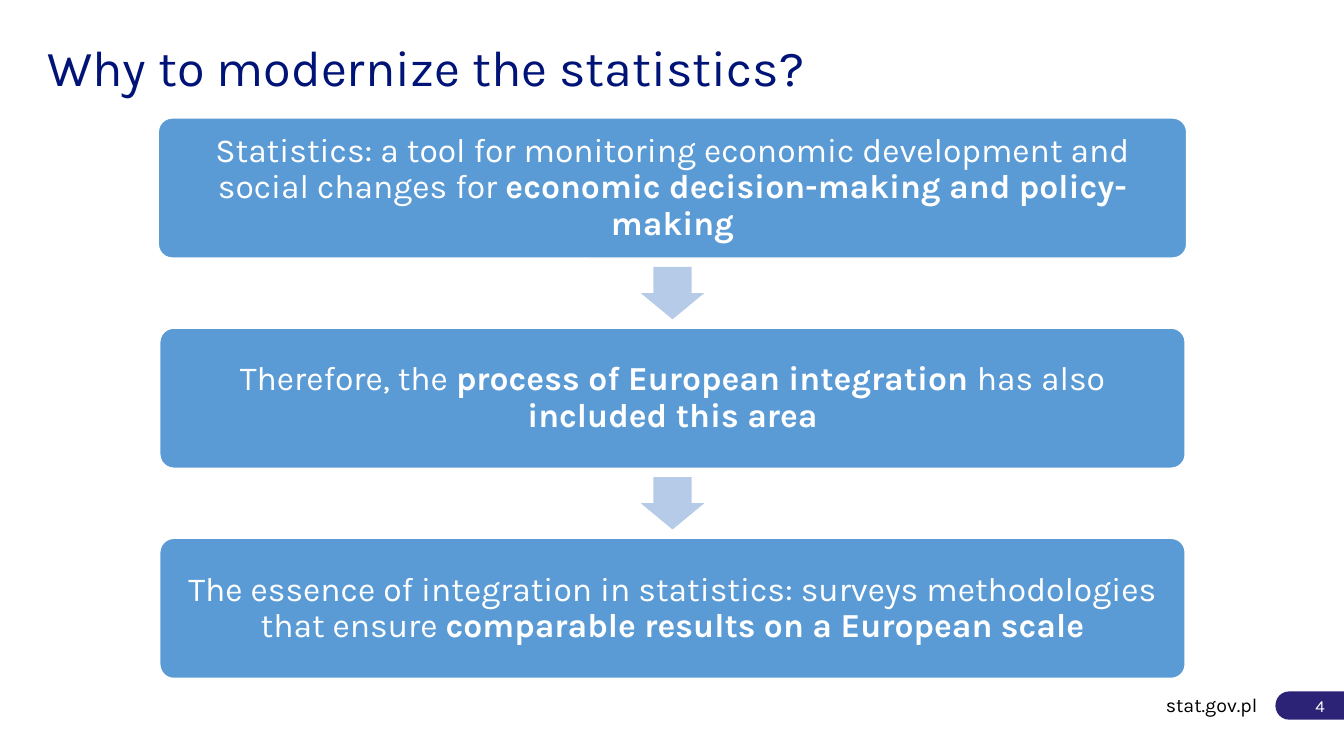
import pptx
import pptx.util
import pptx.dml.color
import pptx.enum.shapes
import pptx.enum.text

Inches = pptx.util.Inches
Shape = pptx.enum.shapes.MSO_SHAPE
Anchor = pptx.enum.text.MSO_ANCHOR
Align = pptx.enum.text.PP_ALIGN


def color(hex_code):
    return pptx.dml.color.RGBColor.from_string(hex_code)


def write(item, runs, size, ink, align, anchor, insets, spacing=1.0):
    """Fill a shape or text box with one paragraph of (text, bold) runs."""
    frame = item.text_frame
    left, top, right, bottom = (Inches(inset) for inset in insets)
    frame_format = {"word_wrap": True, "vertical_anchor": anchor,
                    "margin_left": left, "margin_top": top,
                    "margin_right": right, "margin_bottom": bottom}
    for key, value in frame_format.items():
        setattr(frame, key, value)
    paragraph = frame.paragraphs[0]
    paragraph.alignment = align
    paragraph.line_spacing = spacing
    for text, bold in runs:
        run = paragraph.add_run()
        run.text = text
        font_format = {"name": "Karla", "size": pptx.util.Pt(size), "bold": bold}
        for key, value in font_format.items():
            setattr(run.font, key, value)
        run.font.color.rgb = color(ink)


deck = pptx.Presentation()
deck.slide_width, deck.slide_height = Inches(13.33), Inches(7.5)
slide = deck.slides.add_slide(deck.slide_layouts[6])
shapes = slide.shapes

# Page number badge
badge = shapes.add_shape(Shape.FLOWCHART_TERMINATOR, Inches(12.65),
                         Inches(6.86), Inches(0.83), Inches(0.28))
badge.shadow.inherit = False
badge.fill.solid()
badge.fill.fore_color.rgb = color("2C2276")
badge.line.fill.background()
write(badge, [("4", False)], 12, "FFFFFF", Align.RIGHT, Anchor.MIDDLE,
      (0.04, 0.05, 0.3, 0.05))

# Title and website
title = shapes.add_textbox(Inches(0.37), Inches(0.23), Inches(9.61), Inches(0.79))
write(title, [("Why to modernize the statistics?", False)], 36, "001377",
      Align.LEFT, Anchor.BOTTOM, (0.1, 0.05, 0.1, 0.05), 0.9)

website = shapes.add_textbox(Inches(2.79), Inches(6.7), Inches(9.78), Inches(0.59))
write(website, [("stat.gov.pl", False)], 14, "000000", Align.RIGHT,
      Anchor.MIDDLE, (0, 0.05, 0.1, 0.05))

# Chain of statements, centred on the slide: (width, runs)
statements = [
    (10.2, [("Statistics: a tool for monitoring economic development and "
             "social changes for ", False),
            ("economic decision-making and policy-making", True)]),
    (10.17, [("Therefore, the ", False),
             ("process of European integration ", True),
             ("has also ", False),
             ("included this area", True)]),
    (10.17, [("The essence of integration in statistics: surveys "
              "methodologies that ensure ", False),
             ("comparable results on a European scale", True)]),
]
center, first_top, step, height = 6.67, 1.17, 2.085, 1.39
arrow_length, arrow_breadth = 0.52, 0.63

for index, (width, runs) in enumerate(statements):
    top = first_top + index * step
    statement = shapes.add_shape(Shape.ROUNDED_RECTANGLE, Inches(center - width / 2),
                                 Inches(top), Inches(width), Inches(height))
    statement.adjustments[0] = 0.1
    statement.shadow.inherit = False
    statement.fill.solid()
    statement.fill.fore_color.rgb = color("5B9BD5")
    statement.line.color.rgb = color("FFFFFF")
    statement.line.width = pptx.util.Pt(1)
    write(statement, runs, 24, "FFFFFF", Align.CENTER, Anchor.MIDDLE,
          (0.1, 0.1, 0.1, 0.1), 0.9)

    # Arrow in the middle of the gap to the next statement
    if index < len(statements) - 1:
        gap_middle = top + (height + step) / 2
        arrow = shapes.add_shape(Shape.RIGHT_ARROW,
                                 Inches(center - arrow_length / 2),
                                 Inches(gap_middle - arrow_breadth / 2),
                                 Inches(arrow_length), Inches(arrow_breadth))
        arrow.rotation = 90
        arrow.adjustments[0] = 0.6
        arrow.adjustments[1] = 0.5
        arrow.shadow.inherit = False
        arrow.fill.solid()
        arrow.fill.fore_color.rgb = color("B5CBE7")
        arrow.line.fill.background()

deck.save("out.pptx")
